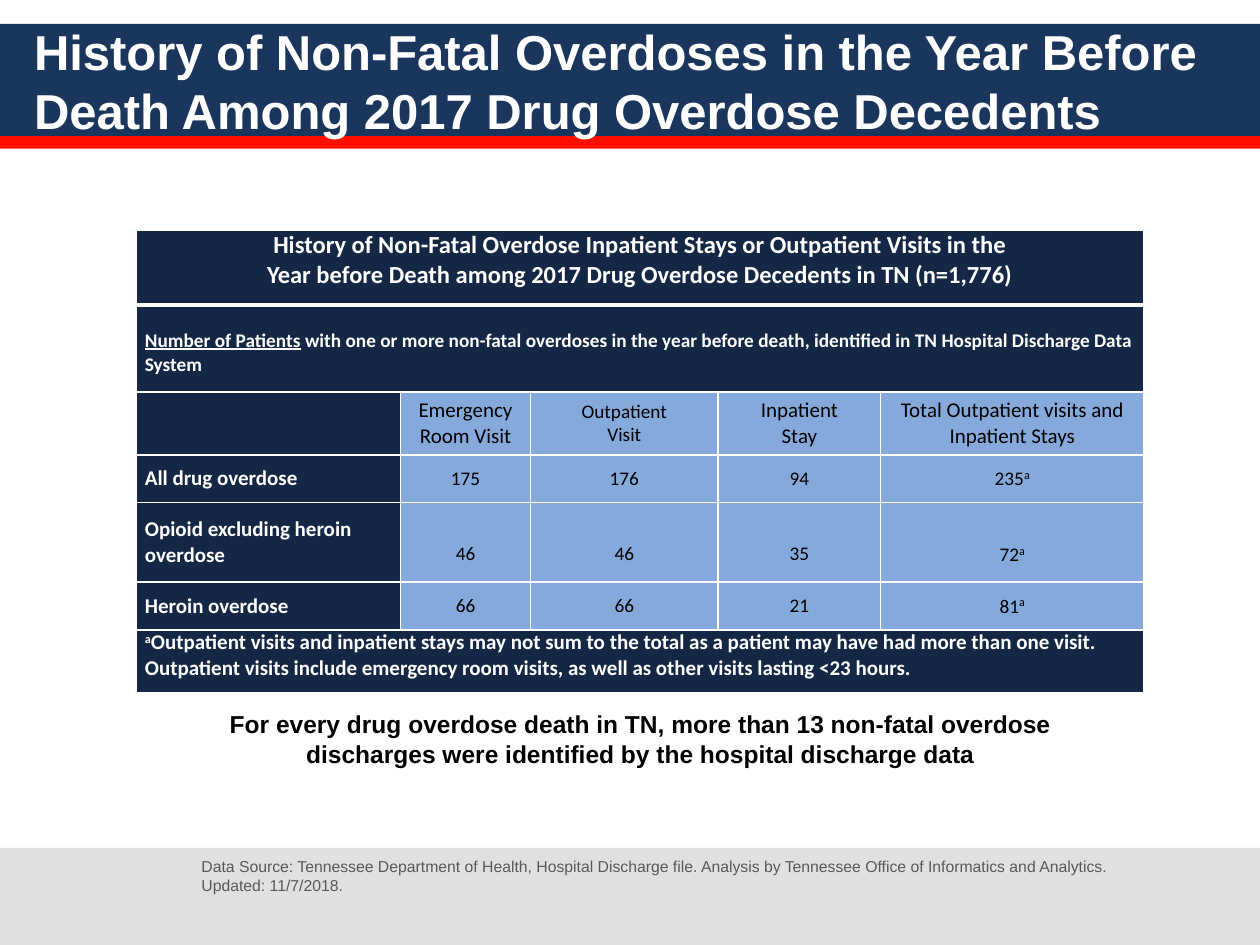
from lxml import etree
from pptx import Presentation
from pptx.dml.color import RGBColor
from pptx.enum.shapes import MSO_SHAPE
from pptx.enum.text import MSO_ANCHOR, PP_ALIGN
from pptx.oxml.ns import qn
from pptx.util import Inches, Pt

RECT = MSO_SHAPE.RECTANGLE
TOP, MIDDLE = MSO_ANCHOR.TOP, MSO_ANCHOR.MIDDLE
LEFT, CENTER = PP_ALIGN.LEFT, PP_ALIGN.CENTER

COLORS = {"band": "1B365D", "stripe": "FF0F00", "foot": "E0E0E0",
          "dark": "142846", "light": "86A9DC", "white": "FFFFFF",
          "black": "000000", "gray": "595959"}

TITLE = "History of Non-Fatal Overdoses in the Year Before Death Among 2017 Drug Overdose Decedents"
SOURCE = ("Data Source: Tennessee Department of Health, Hospital Discharge file. "
          "Analysis by Tennessee Office of Informatics and Analytics. Updated: 11/7/2018.")
FINDING = ("For every drug overdose death in TN, more than 13 non-fatal overdose "
           "discharges were identified by the hospital discharge data")

BANDS = [("band", 0.19, 0.89), ("stripe", 1.08, 0.1), ("foot", 6.73, 0.77)]

CAPTION = ("History of Non-Fatal Overdose Inpatient Stays or Outpatient Visits in the\n"
           "Year before Death among 2017 Drug Overdose Decedents in TN (n=1,776)")
SCOPE = ("Number of Patients", " with one or more non-fatal overdoses in the year "
         "before death, identified in TN Hospital Discharge Data System")
NOTE = ("Outpatient visits and inpatient stays may not sum to the total as a patient "
        "may have had more than one visit. Outpatient visits include emergency room "
        "visits, as well as other visits lasting <23 hours.")
HEADS = [("Emergency\nRoom Visit", 12), ("Outpatient\nVisit", 11),
         ("Inpatient\nStay", 12), ("Total Outpatient visits and Inpatient Stays", 12)]
# label, counts, top inset that lowers the counts
COUNTS = [("All drug overdose", [175, 176, 94, 235], 0),
          ("Opioid excluding heroin overdose", [46, 46, 35, 72], 0.19),
          ("Heroin overdose", [66, 66, 21, 81], 0)]
WIDTHS = [2.1, 1.03, 1.49, 1.29, 2.09]
HEIGHTS = [0.59, 0.69, 0.5, 0.38, 0.63, 0.38, 0.5]


def rgb(name):
    return RGBColor.from_string(COLORS[name])


def style(run, size, color, bold=False, face="Calibri"):
    font = run.font
    font.name, font.size, font.bold = face, Pt(size), bold
    font.color.rgb = rgb(color)


def raise_run(run):
    """Make the run superscript."""
    run.font._element.set("baseline", "30000")


def write(frame, text, size, color, bold=False, align=LEFT, face="Calibri"):
    frame.text = text
    for par in frame.paragraphs:
        par.alignment = align
        for run in par.runs:
            style(run, size, color, bold, face)


def add_run(cell, text, size, color, bold=False):
    run = cell.text_frame.paragraphs[0].add_run()
    run.text = text
    style(run, size, color, bold)
    return run


def add_text(slide, box, text, size, color, bold=False, align=LEFT):
    frame = slide.shapes.add_textbox(*map(Inches, box)).text_frame
    frame.word_wrap = True
    write(frame, text, size, color, bold, align, "Arial")


def set_cell(cell, fill, anchor, thick):
    """Set borders, fill and insets; thick names the side with a 3 pt line."""
    props = cell._tc.get_or_add_tcPr()
    for side in "LRTB":
        width = Pt(3 if side == thick else 1)
        line = etree.SubElement(props, qn("a:ln" + side), w=str(width))
        paint = etree.SubElement(line, qn("a:solidFill"))
        etree.SubElement(paint, qn("a:srgbClr"), val=COLORS["white"])
    cell.fill.solid()
    cell.fill.fore_color.rgb = rgb(fill)
    cell.vertical_anchor = anchor
    cell.margin_left = cell.margin_right = Inches(0.07)
    cell.margin_top = cell.margin_bottom = 0


def add_grid(slide):
    rows, cols = len(HEIGHTS), len(WIDTHS)
    spans = (0, 1, rows - 1)
    box = (1.08, 1.83, sum(WIDTHS), sum(HEIGHTS))
    table = slide.shapes.add_table(rows, cols, *map(Inches, box)).table
    for col, width in zip(table.columns, WIDTHS):
        col.width = Inches(width)
    for r, height in enumerate(HEIGHTS):
        table.rows[r].height = Inches(height)
        for c in range(cols):
            wide = r in spans
            set_cell(table.cell(r, c), "dark" if wide or c == 0 else "light",
                     TOP if wide else MIDDLE, {0: "B", 1: "T"}.get(r))
    for r in spans:
        table.cell(r, 0).merge(table.cell(r, cols - 1))

    write(table.cell(0, 0).text_frame, CAPTION, 14, "white", True, CENTER)
    scope = table.cell(1, 0)
    scope.margin_top = Inches(0.19)
    for text in SCOPE:
        add_run(scope, text, 11, "white", True).font.underline = text == SCOPE[0]
    for c, (text, size) in enumerate(HEADS, 1):
        write(table.cell(2, c).text_frame, text, size, "black", align=CENTER)
    for r, (label, counts, drop) in enumerate(COUNTS, 3):
        write(table.cell(r, 0).text_frame, label, 12, "white", True)
        for c, count in enumerate(counts, 1):
            cell = table.cell(r, c)
            cell.margin_top = Inches(drop)
            write(cell.text_frame, str(count), 11, "black", align=CENTER)
        raise_run(add_run(cell, "a", 12, "black"))
    note = table.cell(rows - 1, 0)
    raise_run(add_run(note, "a", 12, "white", True))
    add_run(note, NOTE, 12, "white", True)


def main():
    deck = Presentation()
    deck.slide_width, deck.slide_height = Inches(10), Inches(7.5)
    slide = deck.slides.add_slide(deck.slide_layouts[5])
    title = slide.shapes.title
    for color, top, height in BANDS:
        band = slide.shapes.add_shape(RECT, 0, Inches(top), Inches(10), Inches(height))
        band.shadow.inherit = False
        band.fill.solid()
        band.fill.fore_color.rgb = rgb(color)
        band.line.fill.background()
        title._element.addprevious(band._element)

    title.left, title.top, title.width, title.height = map(Inches, (0.17, 0.19, 9.67, 0.9))
    frame = title.text_frame
    frame.word_wrap = True
    frame.vertical_anchor = MIDDLE
    write(frame, TITLE, 28, "white", True, LEFT, "Arial")

    add_text(slide, (1.5, 6.75, 7.58, 0.4), SOURCE, 9, "gray")
    add_grid(slide)
    add_text(slide, (1.42, 5.58, 7.33, 0.57), FINDING, 14, "black", True, CENTER)
    deck.save("out.pptx")


if __name__ == "__main__":
    main()
